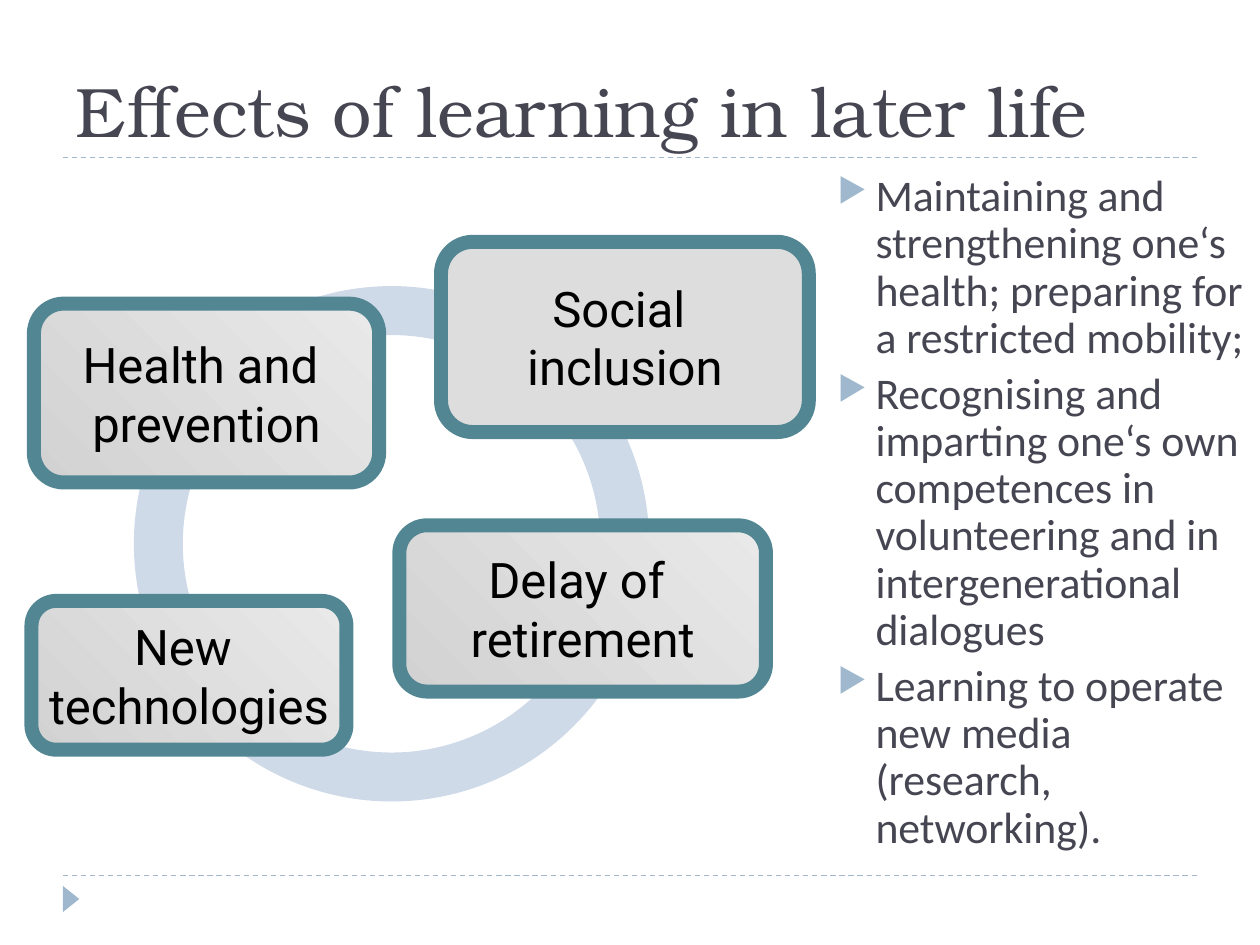
from typing import NamedTuple

import pptx
import pptx.dml.color
import pptx.enum.dml
import pptx.enum.shapes
import pptx.enum.text
import pptx.oxml
import pptx.oxml.ns
import pptx.util

Pt = pptx.util.Pt
SHAPE = pptx.enum.shapes.MSO_SHAPE
ALIGN = pptx.enum.text.PP_ALIGN
ANCHOR = pptx.enum.text.MSO_ANCHOR

INK = "464653"
ACCENT = "9FB8CD"
TEAL = "528693"
RING = "CFDAE8"


class Area(NamedTuple):
    left: float
    top: float
    width: float
    height: float

    def lengths(self) -> list:
        return [Pt(value) for value in self]


class Topic(NamedTuple):
    text: str
    area: Area
    flat: bool = False


TOPICS = [
    Topic("Social \ninclusion", Area(252, 138.2, 210.2, 108.7), flat=True),
    Topic("Delay of \vretirement", Area(228.2, 300.2, 209.5, 95)),
    Topic("Health and \nprevention", Area(19.4, 173.5, 197.3, 102.2)),
    Topic("New \ntechnologies", Area(18, 343.4, 180, 85)),
]
EFFECTS = [
    "Maintaining and strengthening one‘s health; preparing for a restricted mobility;",
    "Recognising and imparting one‘s own competences in volunteering and in intergenerational dialogues",
    "Learning to operate new media (research, networking).",
]


def colour(value: str) -> pptx.dml.color.RGBColor:
    return pptx.dml.color.RGBColor.from_string(value)


def format_text(frame, font: str, size: float, ink: str, align=ALIGN.LEFT) -> None:
    for para in frame.paragraphs:
        para.alignment = align
        for span in para.runs:
            span.font.name = font
            span.font.size = Pt(size)
            span.font.color.rgb = colour(ink)


def add_rule(page, y: float) -> None:
    rule = page.shapes.add_connector(
        pptx.enum.shapes.MSO_CONNECTOR.STRAIGHT, Pt(36), Pt(y), Pt(684), Pt(y))
    rule.line.color.rgb = colour(ACCENT)
    rule.line.width = Pt(0.75)
    rule.line.dash_style = pptx.enum.dml.MSO_LINE.DASH
    rule._element.spPr.append(pptx.oxml.parse_xml(
        f'<a:effectLst {pptx.oxml.ns.nsdecls("a")}/>'))


def add_plain_shape(page, kind, area: Area, fill: str):
    shape = page.shapes.add_shape(kind, *area.lengths())
    shape.shadow.inherit = False
    shape.fill.solid()
    shape.fill.fore_color.rgb = colour(fill)
    shape.line.fill.background()
    return shape


def add_topic(page, topic: Topic) -> None:
    box = add_plain_shape(page, SHAPE.ROUNDED_RECTANGLE, topic.area, "DDDDDD")
    if not topic.flat:
        box.fill.gradient()
        box.fill.gradient_angle = 45
        for stop, shade in zip(box.fill.gradient_stops, ("D2D2D2", "E9E9E9")):
            stop.color.rgb = colour(shade)
    box.line.color.rgb = colour(TEAL)
    box.line.width = Pt(8)
    frame = box.text_frame
    frame.text = topic.text
    frame.word_wrap = False
    frame.vertical_anchor = ANCHOR.MIDDLE
    format_text(frame, "Roboto", 28, "000000", ALIGN.CENTER)


def add_bullet(para) -> None:
    properties = para._p.get_or_add_pPr()
    properties.set("marL", str(Pt(43.2)))
    properties.set("indent", str(Pt(-21.6)))
    for tag in (f'buClr {{}}><a:srgbClr val="{ACCENT}"/></a:buClr>',
                'buSzPct {} val="76000"/>',
                'buChar {} char="▶"/>'):
        properties.append(pptx.oxml.parse_xml(
            "<a:" + tag.format(pptx.oxml.ns.nsdecls("a"))))


def add_effects(page) -> None:
    box = page.shapes.add_textbox(*Area(450, 95.8, 270, 414).lengths())
    frame = box.text_frame
    frame.word_wrap = True
    frame.text = "\n".join(EFFECTS)
    format_text(frame, "Calibri", 25, INK)
    for para in frame.paragraphs:
        para.line_spacing = 0.9
        para.space_before = Pt(5)
        add_bullet(para)


def set_title(page, text: str) -> None:
    title = page.shapes.title
    title.left, title.top, title.width, title.height = Area(36, 18, 648, 72).lengths()
    frame = title.text_frame
    frame.text = text
    frame.auto_size = pptx.enum.text.MSO_AUTO_SIZE.NONE
    frame.vertical_anchor = ANCHOR.BOTTOM
    format_text(frame, "TeX Gyre Bonum", 40, INK)


def main() -> None:
    deck = pptx.Presentation()
    deck.slide_width, deck.slide_height = Pt(720), Pt(540)
    page = deck.slides.add_slide(deck.slide_layouts.get_by_name("Title Only"))

    for y in (500.4, 90):
        add_rule(page, y)
    marker = add_plain_shape(
        page, SHAPE.ISOSCELES_TRIANGLE, Area(33.1, 509, 15, 9.4), ACCENT)
    marker.rotation = 90

    set_title(page, "Effects of learning in later life")
    add_effects(page)

    ring = add_plain_shape(page, SHAPE.DONUT, Area(76.5, 163.5, 294.5, 294.5), RING)
    ring.adjustments[0] = 0.095
    for topic in TOPICS:
        add_topic(page, topic)

    deck.save("out.pptx")


if __name__ == "__main__":
    main()
